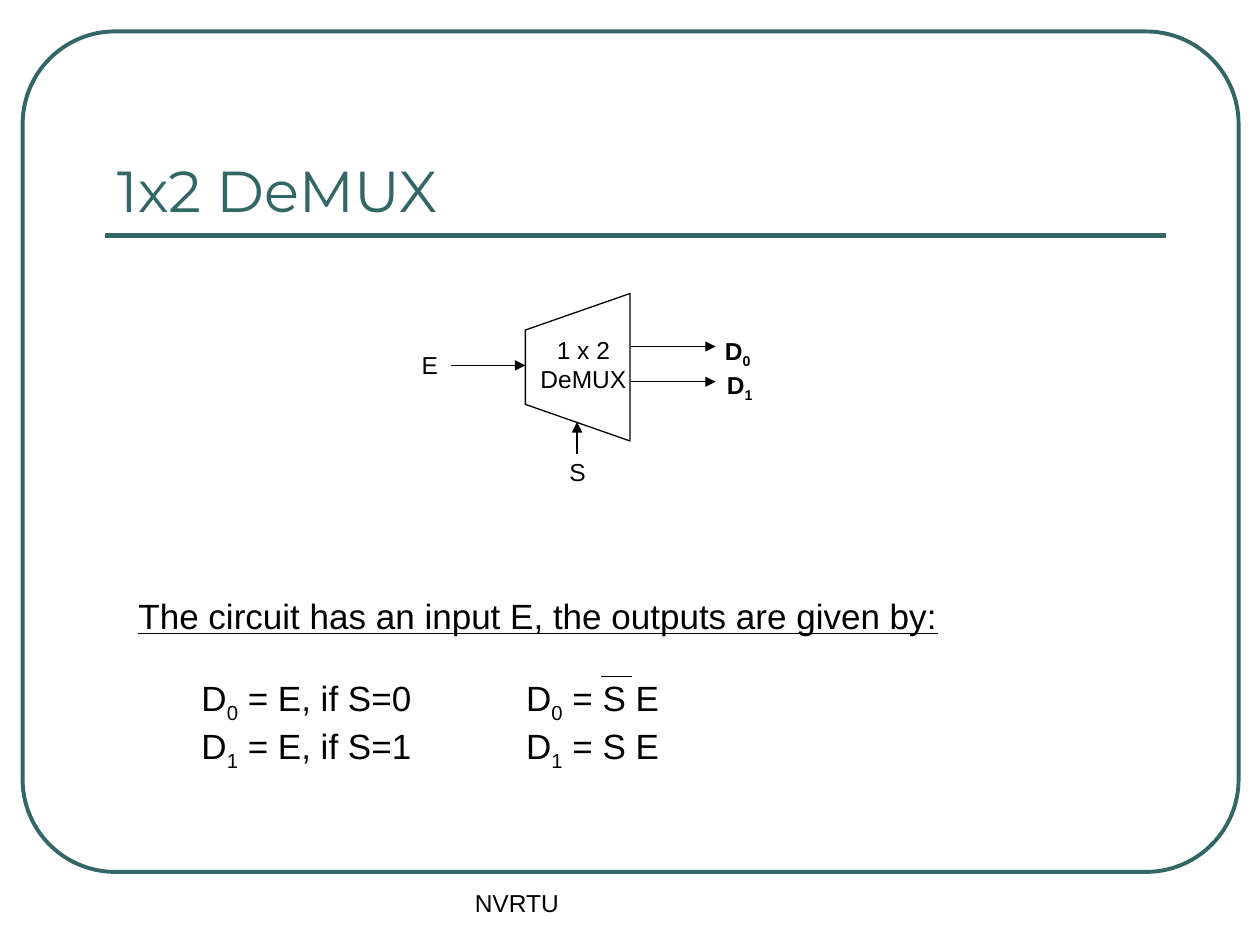
from lxml.etree import SubElement
from pptx import Presentation
from pptx.dml.color import RGBColor
from pptx.enum.shapes import MSO_CONNECTOR as Connector, MSO_SHAPE as Shape
from pptx.enum.text import MSO_ANCHOR as Anchor, PP_ALIGN as Align
from pptx.oxml.ns import qn
from pptx.util import Inches, Pt

TEAL, BLACK = "336666", "000000"
TITLE = {"name": "Montserrat", "size": Pt(33)}
BODY = {"name": "Arial", "size": Pt(20)}
LABEL = {"name": "Arial", "size": Pt(14)}
CENTERED = {"alignment": Align.CENTER}

HEADING = [("The circuit has an input E, the outputs are given by:", {"underline": True})]
EQUATIONS = [("0", "= E, if S=0", "= S E"), ("1", "= E, if S=1", "= S E")]
TAB_STOPS = [0.5, 3]
DEMUX_OUTLINE = [(5, 3.5), (4.17, 3.21), (4.17, 2.62), (5, 2.33)]
ARROWS = [
    (4.58, 3.6, 4.58, 3.35),
    (5.01, 2.75, 5.68, 2.75),
    (5.01, 3.03, 5.68, 3.03),
    (3.58, 2.9, 4.17, 2.9),
]
LABELS = [
    ("S", (4.42, 3.58, 0.33, 0.34)),
    ("E", (3.12, 2.73, 0.58, 0.34)),
    ("1 x 2 DeMUX", (4.17, 2.61, 0.92, 0.57)),
]
SUBSCRIPT = {"subscript": True}


def color(value):
    return RGBColor.from_string(value)


def apply(target, values):
    for name, value in values.items():
        setattr(target, name, value)


def add_runs(paragraph, runs, font, fill):
    for text, extra in runs:
        if text == "\n":
            paragraph.add_line_break()
            continue
        run = paragraph.add_run()
        run.text = text
        values = {**font, **extra}
        if values.pop("subscript", False):
            run.font._element.set("baseline", "-25000")
        apply(run.font, values)
        run.font.color.rgb = color(fill)


def add_text(slide, box, paragraphs, font, fill=BLACK, anchor=Anchor.TOP):
    shape = slide.shapes.add_textbox(*map(Inches, box))
    frame = shape.text_frame
    apply(frame, {"word_wrap": True, "vertical_anchor": anchor})
    for index, (runs, layout) in enumerate(paragraphs):
        paragraph = frame.add_paragraph() if index else frame.paragraphs[0]
        apply(paragraph, layout)
        add_runs(paragraph, runs, font, fill)
    return frame


def add_line(slide, ends, width=0.75, stroke=BLACK, arrow=False):
    line = slide.shapes.add_connector(Connector.STRAIGHT, *map(Inches, ends))
    line.line.width = Pt(width)
    line.line.color.rgb = color(stroke)
    if arrow:
        SubElement(line.line._get_or_add_ln(), qn("a:tailEnd"), type="triangle")
    SubElement(line._element.spPr, qn("a:effectLst"))


def outline(shape, stroke, width):
    shape.shadow.inherit = False
    shape.fill.background()
    shape.line.color.rgb = color(stroke)
    shape.line.width = Pt(width)


def add_frame(slide):
    border = slide.shapes.add_shape(Shape.ROUNDED_RECTANGLE, *map(Inches, (0.18, 0.25, 9.65, 6.67)))
    border.adjustments[0] = 0.11
    outline(border, TEAL, 2.25)
    add_line(slide, (0.83, 1.87, 9.25, 1.87), 3, TEAL)
    add_text(slide, (0.83, 0.58, 8.41, 1.25), [([("1x2 DeMUX", {})], {})], TITLE, TEAL, Anchor.BOTTOM)
    add_text(slide, (3.67, 7, 3.16, 0.5), [([("NVRTU", {})], {})], LABEL)


def add_equations(slide):
    paragraphs = [(HEADING, {})]
    for index, condition, product in EQUATIONS:
        runs = [("\tD", {}), (index, SUBSCRIPT), (f" {condition}\t D", {}), (index, SUBSCRIPT), (f" {product}", {})]
        paragraphs.append((runs, {"space_before": Pt(0 if len(paragraphs) > 1 else 23)}))
    frame = add_text(slide, (1, 4.67, 7.25, 1.45), paragraphs, BODY)
    for paragraph in frame.paragraphs[1:]:
        tabs = SubElement(paragraph._p.get_or_add_pPr(), qn("a:tabLst"))
        for stop in TAB_STOPS:
            SubElement(tabs, qn("a:tab"), pos=str(Inches(stop)), algn="l")
    add_line(slide, (4.77, 5.37, 5.02, 5.37))


def add_demux(slide):
    points = [(Inches(x), Inches(y)) for x, y in DEMUX_OUTLINE]
    builder = slide.shapes.build_freeform(*points[0])
    builder.add_line_segments(points[1:], close=True)
    outline(builder.convert_to_shape(), BLACK, 0.75)
    for ends in ARROWS:
        add_line(slide, ends, arrow=True)
    for text, box in LABELS:
        add_text(slide, box, [([(text, {})], CENTERED)], LABEL)
    outputs = [("D", {}), ("0 ", SUBSCRIPT), ("\n", {}), ("D", {}), ("1", SUBSCRIPT)]
    add_text(slide, (5.58, 2.62, 0.58, 0.57), [(outputs, CENTERED)], {**LABEL, "bold": True})


def main():
    presentation = Presentation()
    apply(presentation, {"slide_width": Inches(10), "slide_height": Inches(7.5)})
    slide = presentation.slides.add_slide(presentation.slide_layouts[6])
    add_frame(slide)
    add_equations(slide)
    add_demux(slide)
    presentation.save("out.pptx")


if __name__ == "__main__":
    main()
